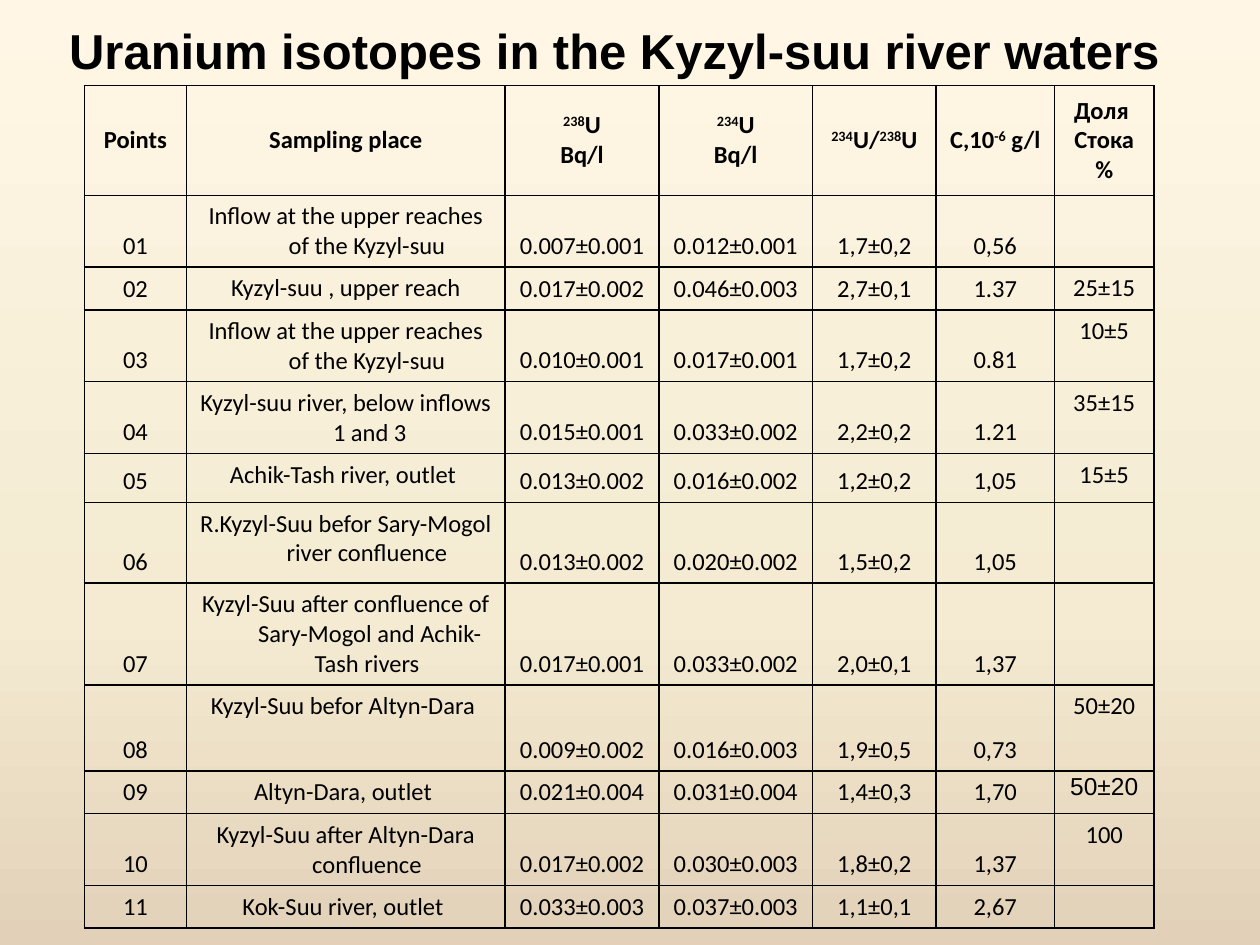
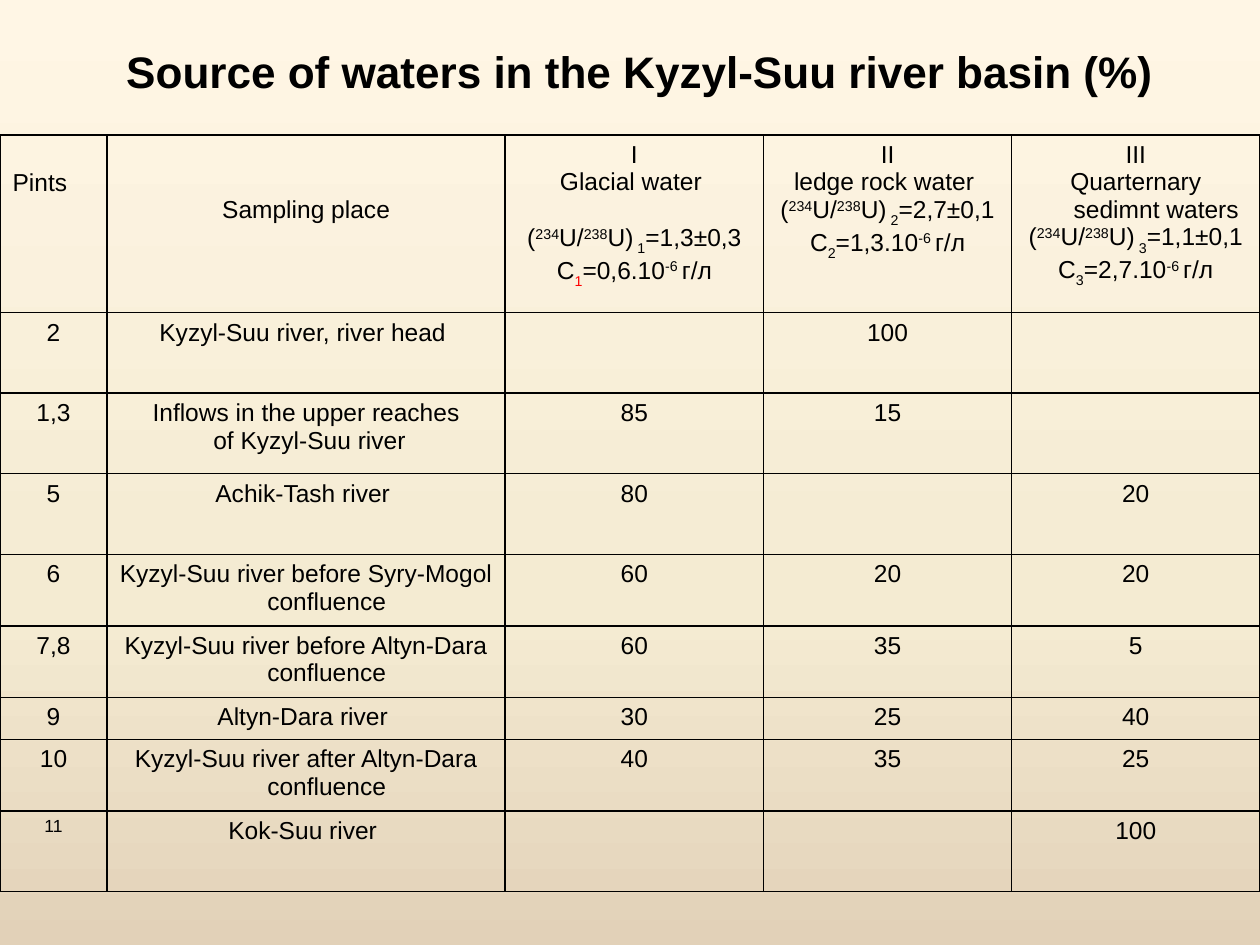
from copy import deepcopy
from dataclasses import dataclass

from lxml.etree import SubElement
from pptx import Presentation
from pptx.dml.color import RGBColor as Rgb
from pptx.enum.text import MSO_ANCHOR as Anchor, PP_ALIGN as Align
from pptx.oxml.ns import qn
from pptx.util import Inches, Pt


@dataclass(frozen=True)
class Theme:
    ink: str = "000000"
    accent: str = "FF0000"
    background: tuple = ((0, "FFF6E5"), (0.65, "F4EBD2"), (1, "E2D1B8"))
    sans: str = "Arial"
    table_face: str = "Calibri"
    body: float = 14
    small: float = 10
    line: float = 1
    hanging: float = 0.38


theme = Theme()


def write(frame, text, size=theme.body, face=theme.sans, bold=False,
          align=Align.CENTER, anchor=Anchor.TOP, hanging=0):
    """Fill a frame; | splits spans, led by ^ (raised), _ (lowered) or ~ (lowered, accent)."""
    frame.word_wrap = True
    frame.vertical_anchor = anchor
    for index, line in enumerate(text.split("\n")):
        para = frame.add_paragraph() if index else frame.paragraphs[0]
        para.alignment = align
        if hanging:
            properties = para._p.get_or_add_pPr()
            properties.set("marL", str(Inches(hanging)))
            properties.set("indent", str(-Inches(hanging)))
        for part in filter(None, line.split("|")):
            mark = part[0] if part[0] in "^_~" else ""
            span = para.add_run()
            span.text = part[len(mark):]
            span.font.size = Pt(size)
            span.font.name = face
            span.font.bold = bold
            span.font.color.rgb = Rgb.from_string(theme.accent if mark == "~" else theme.ink)
            if mark:
                span.font._element.set("baseline", "30000" if mark == "^" else "-30000")
        if not line:
            SubElement(para._p, qn("a:endParaRPr"), sz=str(int(size * 100)))


def add_grid(page, left, top, widths, heights, rows, style):
    """Add a ruled table without fill; style(row, column) gives each cell's text format."""
    table = page.shapes.add_table(
        len(rows), len(widths), Inches(left), Inches(top),
        Inches(sum(widths)), Inches(sum(heights))).table
    table.first_row = table.horz_banding = False
    for column, width in zip(table.columns, widths):
        column.width = Inches(width)
    for row, height in zip(table.rows, heights):
        row.height = Inches(height)
    for r, values in enumerate(rows):
        for c, value in enumerate(values):
            cell = table.cell(r, c)
            options = dict(hanging=theme.hanging) | style(r, c)
            write(cell.text_frame, value, **options)
            cell.vertical_anchor = options.get("anchor", Anchor.TOP)
            cell.fill.background()
            borders = cell._tc.get_or_add_tcPr()
            for place, side in enumerate(("a:lnL", "a:lnR", "a:lnT", "a:lnB")):
                border = SubElement(borders, qn(side), w=str(Pt(theme.line)))
                fill = SubElement(border, qn("a:solidFill"))
                SubElement(fill, qn("a:srgbClr"), val=theme.ink)
                borders.insert(place, border)
    return table


deck = Presentation()
deck.slide_width, deck.slide_height = Inches(10), Inches(7.5)

# Shared background: three-stop gradient running down the page
master = deck.slide_master
backdrop = master.background.fill
backdrop.gradient()
backdrop.gradient_angle = 270
stop_list = next(master._element.iter(qn("a:gsLst")))
stop_list.append(deepcopy(stop_list[-1]))
for stop, (position, color) in zip(backdrop.gradient_stops, theme.background):
    stop.position = position
    stop.color.rgb = Rgb.from_string(color)

# Pages with their titles
titles = [
    ("Uranium isotopes in the Kyzyl-suu river waters ", (0.43, 0, 9, 0.79), 28),
    ("Source of waters in the Kyzyl-Suu river basin (%) ", (0.75, 0.21, 8.75, 0.71), 25.2),
]
pages = []
for title, bounds, size in titles:
    page = deck.slides.add_slide(deck.slide_layouts[6])
    box = page.shapes.add_textbox(*map(Inches, bounds))
    write(box.text_frame, title, size=size, bold=True, anchor=Anchor.MIDDLE)
    pages.append(page)
isotope_page, source_page = pages

# Isotope measurements
isotope_rows = [
    ("Points", "Sampling place", "|^238|U\nBq/l", "|^234|U\nBq/l", "|^234|U/|^238|U",
     "C,10|^-6| g/l", "Доля \nСтока\n%"),
    ("01", "Inflow at the upper reaches of the Kyzyl-suu ",
     "0.007±0.001", "0.012±0.001", "1,7±0,2", "0,56", ""),
    ("02", "Kyzyl-suu , upper reach",
     "0.017±0.002", "0.046±0.003", "2,7±0,1", "1.37", "25±15"),
    ("03", "Inflow at the upper reaches of the Kyzyl-suu ",
     "0.010±0.001", "0.017±0.001", "1,7±0,2", "0.81", "10±5"),
    ("04", "Kyzyl-suu river, below inflows 1 and 3",
     "0.015±0.001", "0.033±0.002", "2,2±0,2", "1.21", "35±15"),
    ("05", "Achik-Tash river, outlet ",
     "0.013±0.002", "0.016±0.002", "1,2±0,2", "1,05", "15±5"),
    ("06", "R.Kyzyl-Suu befor Sary-Mogol river confluence ",
     "0.013±0.002", "0.020±0.002", "1,5±0,2", "1,05", ""),
    ("07", "Kyzyl-Suu after confluence of Sary-Mogol and Achik-Tash rivers ",
     "0.017±0.001", "0.033±0.002", "2,0±0,1", "1,37", ""),
    ("08", "Kyzyl-Suu befor Altyn-Dara ",
     "0.009±0.002", "0.016±0.003", "1,9±0,5", "0,73", "50±20"),
    ("09", "Altyn-Dara, outlet ",
     "0.021±0.004", "0.031±0.004", "1,4±0,3", "1,70", "50±20"),
    ("10", "Kyzyl-Suu after Altyn-Dara confluence ",
     "0.017±0.002", "0.030±0.003", "1,8±0,2", "1,37", "100"),
    ("11", "Kok-Suu river, outlet ",
     "0.033±0.003", "0.037±0.003", "1,1±0,1", "2,67", ""),
]
isotope_table = add_grid(
    isotope_page, 0.67, 0.68,
    [0.81, 2.53, 1.22, 1.22, 0.98, 0.94, 0.79],
    [0.87, 0.57, 0.34, 0.57, 0.57, 0.39, 0.64, 0.81, 0.68, 0.34, 0.57, 0.34],
    isotope_rows,
    lambda r, c: dict(
        face=theme.sans if (r, c) == (9, 6) else theme.table_face,
        bold=r == 0,
        anchor=Anchor.MIDDLE if r == 0 else Anchor.TOP if c in (1, 6) else Anchor.BOTTOM))
isotope_table.cell(9, 6).margin_top = Inches(0.02)

# Shares of the three water sources
ratio = "(|^234|U/|^238|U)|"
source_rows = [
    ("Pints", "Sampling place",
     f"I\nGlacial water \n{ratio}_ 1|=1,3±0,3\nC|~1|=0,6.10|^-6 |г/л",
     f"II\nledge rock water \n{ratio}_ 2|=2,7±0,1\nC|_2|=1,3.10|^-6 |г/л",
     f"III\nQuarternary sedimnt waters \n{ratio}_ 3|=1,1±0,1\nC|_3|=2,7.10|^-6 |г/л"),
    ("2", "Kyzyl-Suu river, river head ", "", "100", ""),
    ("1,3", "Inflows in the upper reaches\n of Kyzyl-Suu river", "85", "15", ""),
    ("5", "Achik-Tash river ", "80", "", "20"),
    ("6", "Kyzyl-Suu river before Syry-Mogol confluence ", "60", "20", "20"),
    ("7,8", "Kyzyl-Suu river before Altyn-Dara confluence ", "60", "35", "5"),
    ("9", "Altyn-Dara river ", "30", "25", "40"),
    ("10", "Kyzyl-Suu river after Altyn-Dara confluence ", "40", "35", "25"),
    ("11", "Kok-Suu river ", "", "", "100"),
]
source_table = add_grid(
    source_page, 0, 1.07,
    [0.85, 3.16, 2.05, 1.97, 1.97],
    [1.41, 0.64, 0.64, 0.64, 0.54, 0.54, 0.32, 0.54, 0.64],
    source_rows,
    lambda r, c: dict(
        size=theme.small if (r, c) == (8, 0) else theme.body,
        align=Align.LEFT if (r, c) == (0, 0) else Align.CENTER))
# Header labels sit one and two lines down; the glacial formula skips a line
source_table.cell(0, 0).margin_top = Inches(0.27)
source_table.cell(0, 1).margin_top = Inches(0.49)
source_table.cell(0, 2).text_frame.paragraphs[2].space_before = Pt(16)

deck.save("out.pptx")
